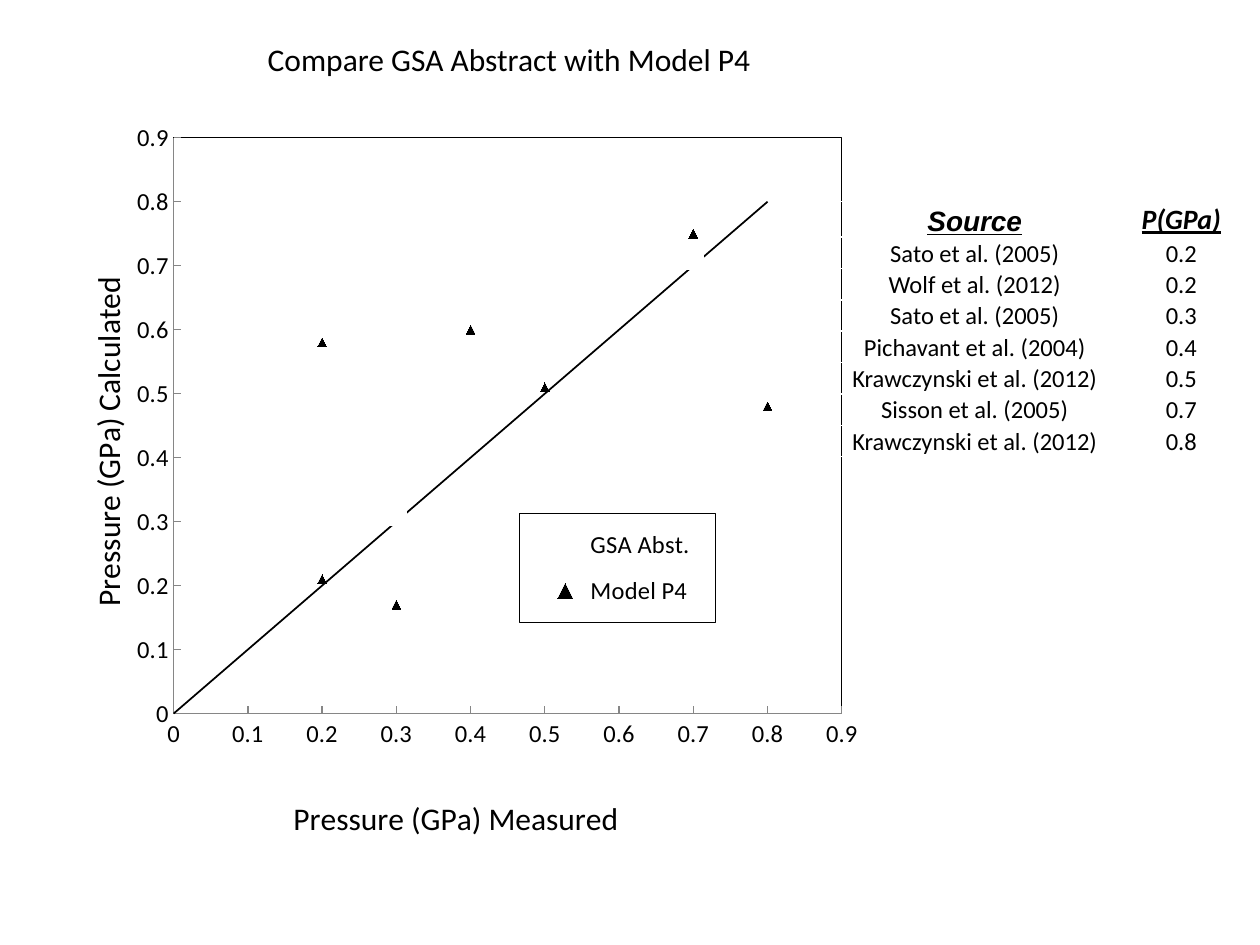
from dataclasses import dataclass

from lxml.etree import SubElement
from pptx import Presentation
from pptx.chart.data import XyChartData
from pptx.dml.color import RGBColor
from pptx.enum.chart import XL_CHART_TYPE, XL_LEGEND_POSITION, XL_MARKER_STYLE, XL_TICK_MARK
from pptx.enum.text import MSO_ANCHOR, PP_ALIGN
from pptx.oxml import parse_xml
from pptx.oxml.ns import nsdecls, qn
from pptx.util import Cm, Pt


@dataclass(frozen=True)
class Theme:
    ink: RGBColor = RGBColor(0, 0, 0)
    axis: RGBColor = RGBColor(0x86, 0x86, 0x86)
    font: str = "Calibri"
    head_font: str = "Arial"
    title: Pt = Pt(18)
    head: Pt = Pt(16)
    body: Pt = Pt(14)


def set_layout(parent, index, inner=False, **place):
    for old in parent.findall(qn("c:layout")):
        parent.remove(old)
    layout = parent.makeelement(qn("c:layout"))
    parent.insert(index, layout)
    manual = SubElement(layout, qn("c:manualLayout"))
    if inner:
        SubElement(manual, qn("c:layoutTarget")).set("val", "inner")
    for side in ("xMode", "yMode"):
        SubElement(manual, qn(f"c:{side}")).set("val", "edge")
    for key, value in place.items():
        SubElement(manual, qn(f"c:{key}")).set("val", str(value))


def set_font(font, size, name, bold=False):
    font.size, font.name, font.bold = size, name, bold
    font.color.rgb = theme.ink


theme = Theme()
prs = Presentation()
prs.slide_width, prs.slide_height = Cm(25.4), Cm(19.05)
s = prs.slides.add_slide(prs.slide_layouts[5])

title = s.shapes.title
title.left, title.top, title.width, title.height = Cm(2.34), Cm(0.61), Cm(15.85), Cm(1.14)
tf = title.text_frame
tf.text = "Compare GSA Abstract with Model P4"
tf.vertical_anchor = MSO_ANCHOR.MIDDLE
p = tf.paragraphs[0]
p.alignment = PP_ALIGN.CENTER
set_font(p.runs[0].font, theme.title, theme.font)

measured = [0.2, 0.2, 0.3, 0.4, 0.5, 0.7, 0.8]
one_to_one = [0, 0.1, 0.5, 0.8]
data = XyChartData()
for name, xs, ys in [
    ("GSA Abst.", measured, [0.29, 0.26, 0.31, 0.48, 0.45, 0.71, 0.6]),
    ("Series 2", one_to_one, one_to_one),
    ("Model P4", measured, [0.21, 0.58, 0.17, 0.6, 0.51, 0.75, 0.48]),
]:
    series = data.add_series(name)
    for x, y in zip(xs, ys):
        series.add_data_point(x, y)

chart = s.shapes.add_chart(
    XL_CHART_TYPE.XY_SCATTER, Cm(0.48), Cm(2.18), Cm(19), Cm(14.96), data
).chart
chart.has_title = False
set_font(chart.font, theme.body, theme.font)
chart.plots[0].vary_by_categories = False

gsa, line, model = chart.plots[0].series
for series, style, size in [
    (gsa, XL_MARKER_STYLE.SQUARE, 12),
    (line, XL_MARKER_STYLE.NONE, 5),
    (model, XL_MARKER_STYLE.TRIANGLE, 5),
]:
    series.smooth = False
    series.format.line.fill.background()
    series.marker.style, series.marker.size = style, size
    series.marker.format.line.fill.background()
gsa.marker.format.fill.background()
model.marker.format.fill.solid()
model.marker.format.fill.fore_color.rgb = theme.ink
line.format.line.color.rgb = theme.ink
line.format.line.width = Pt(1)

for axis, text, x, y in [
    (chart.category_axis, "Pressure (GPa) Measured", 0.28, 0.92),
    (chart.value_axis, "Pressure (GPa) Calculated", 0.06, 0.22),
]:
    axis.minimum_scale, axis.maximum_scale, axis.major_unit = 0, 0.9, 0.1
    axis.has_major_gridlines = False
    axis.major_tick_mark, axis.minor_tick_mark = XL_TICK_MARK.INSIDE, XL_TICK_MARK.NONE
    axis.format.line.color.rgb = theme.axis
    set_font(axis.tick_labels.font, theme.body, theme.font)
    tf = axis.axis_title.text_frame
    tf.text = text
    set_font(tf.paragraphs[0].runs[0].font, theme.title, theme.font)
    set_layout(axis.axis_title.element, 1, x=x, y=y)

chart.has_legend = True
chart.legend.position = XL_LEGEND_POSITION.RIGHT
chart.legend.include_in_layout = False
set_font(chart.legend.font, theme.body, theme.font)
legend = next(chart.element.iter(qn("c:legend")))
legend.insert(1, parse_xml(
    f'<c:legendEntry {nsdecls("c")}><c:idx val="1"/><c:delete val="1"/></c:legendEntry>'
))
set_layout(legend, 2, x=0.526, y=0.546, w=0.208, h=0.147)
plot_area = next(chart.element.iter(qn("c:plotArea")))
set_layout(plot_area, 0, inner=True, x=0.159, y=0.04, w=0.709, h=0.776)

frame = (
    f'<c:spPr {nsdecls("c", "a")}><a:noFill/><a:ln w="9525"><a:solidFill>'
    f'<a:srgbClr val="{theme.ink}"/></a:solidFill></a:ln></c:spPr>'
)
plot_area.append(parse_xml(frame))
legend.find(qn("c:overlay")).addnext(parse_xml(frame))

rows = [
    ("Source", "P(GPa)"),
    ("Sato et al. (2005)", "0.2"),
    ("Wolf et al. (2012)", "0.2"),
    ("Sato et al. (2005)", "0.3"),
    ("Pichavant et al. (2004)", "0.4"),
    ("Krawczynski et al. (2012)", "0.5"),
    ("Sisson et al. (2005)", "0.7"),
    ("Krawczynski et al. (2012)", "0.8"),
]
table = s.shapes.add_table(len(rows), 2, Cm(16.74), Cm(4.06), Cm(8.33), Cm(5.1)).table
table.first_row = table.horz_banding = False
table.columns[0].width, table.columns[1].width = Cm(5.82), Cm(2.51)
for i, row in enumerate(rows):
    head = i == 0
    table.rows[i].height = Cm(0.7 if head else 0.62)
    for j, text in enumerate(row):
        cell = table.cell(i, j)
        cell.text = text
        cell.fill.background()
        cell.vertical_anchor = MSO_ANCHOR.BOTTOM
        cell.margin_left = cell.margin_right = cell.margin_top = Cm(0.03)
        cell.margin_bottom = 0
        p = cell.text_frame.paragraphs[0]
        p.alignment = PP_ALIGN.CENTER
        r = p.runs[0]
        name = theme.head_font if head and j == 0 else theme.font
        set_font(r.font, theme.head if head else theme.body, name, head)
        r.font.italic = r.font.underline = head

prs.save("out.pptx")
